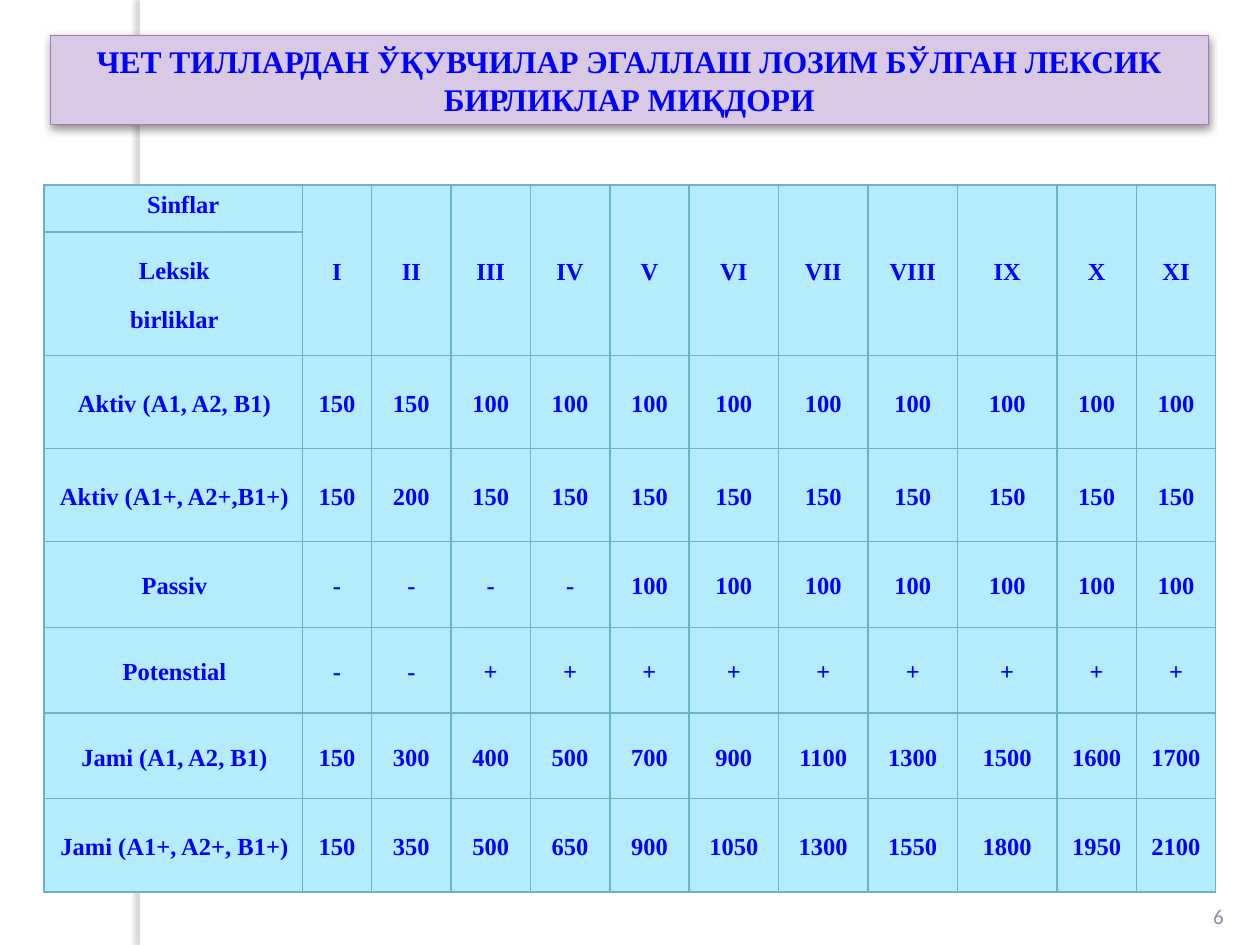
from typing import NamedTuple

from lxml.etree import SubElement as Sub
from pptx import Presentation
from pptx.dml.color import RGBColor as RGB
from pptx.enum.shapes import MSO_SHAPE as Kind
from pptx.enum.text import MSO_ANCHOR as Anchor, MSO_AUTO_SIZE as Fit, PP_ALIGN as Align
from pptx.oxml.ns import qn
from pptx.util import Inches, Pt

WHITE = RGB(0xFF, 0xFF, 0xFF)
BLACK = RGB(0, 0, 0)
BLUE = RGB(0, 0, 0xFF)
SKY = RGB(0xB4, 0xEC, 0xFE)
TEAL = RGB(0x6B, 0xB1, 0xC9)
LILAC = RGB(0xDA, 0xC9, 0xE4)
PURPLE = RGB(0xA3, 0x79, 0xBB)
MAUVE = RGB(0x94, 0x8A, 0xA0)
GREY = RGB(0x64, 0x60, 0x68)
SERIF = "Times New Roman"


class Box(NamedTuple):
    left: float
    top: float
    width: float
    height: float


class Shade(NamedTuple):
    color: RGB
    alpha: int
    blur: int
    dist: int
    angle: int


class Row(NamedTuple):
    label: str
    height: float
    values: list[str]


TITLE = "ЧЕТ ТИЛЛАРДАН ЎҚУВЧИЛАР ЭГАЛЛАШ ЛОЗИМ БЎЛГАН ЛЕКСИК БИРЛИКЛАР МИҚДОРИ"
COLS = [2.05, 0.55] + [0.63] * 4 + [0.71] * 3 + [0.79] + [0.63] * 2
ROWS = [
    Row("Sinflar", 0.37, "I II III IV V VI VII VIII IX X XI".split()),
    Row("Leksik\nbirliklar", 0.98, []),
    Row("Aktiv (A1, A2, B1)", 0.74, ["150"] * 2 + ["100"] * 9),
    Row("Aktiv (A1+, A2+,B1+)", 0.74, ["150", "200"] + ["150"] * 9),
    Row("Passiv", 0.68, ["-"] * 4 + ["100"] * 7),
    Row("Potenstial", 0.68, ["-"] * 2 + ["+"] * 9),
    Row("Jami (A1, A2, B1)", 0.68,
        "150 300 400 500 700 900 1100 1300 1500 1600 1700".split()),
    Row("Jami (A1+, A2+, B1+)", 0.74,
        "150 350 500 650 900 1050 1300 1550 1800 1950 2100".split()),
]


def place(box: Box) -> list:
    return [Inches(n) for n in box]


def style(para, size: float, name: str, color: RGB, bold: bool) -> None:
    para.alignment = Align.CENTER
    font = para.font
    font.size, font.name, font.bold = Pt(size), name, bold
    font.color.rgb = color


def add_rect(slide, box: Box, fill: RGB, shade: Shade):
    rect = slide.shapes.add_shape(Kind.RECTANGLE, *place(box))
    rect.fill.solid()
    rect.fill.fore_color.rgb = fill
    rect.line.fill.background()
    rect.shadow.inherit = False
    glow = Sub(rect._element.spPr.find(qn("a:effectLst")), qn("a:outerShdw"),
               blurRad=str(Pt(shade.blur)), dist=str(Pt(shade.dist)),
               dir=str(shade.angle * 60000), algn="ctr", rotWithShape="0")
    tint = Sub(glow, qn("a:srgbClr"), val=str(shade.color))
    Sub(tint, qn("a:alpha"), val=str(shade.alpha * 1000))
    return rect


def add_title(slide) -> None:
    rect = add_rect(slide, Box(0.4, 0.28, 9.19, 0.71), LILAC, Shade(BLACK, 43, 5, 2, 90))
    rect.line.color.rgb = PURPLE
    rect.line.width = Pt(0.75)
    frame = rect.text_frame
    frame.word_wrap = True
    frame.auto_size = Fit.SHAPE_TO_FIT_TEXT
    frame.vertical_anchor = Anchor.MIDDLE
    frame.text = TITLE
    style(frame.paragraphs[0], 18, SERIF, BLUE, True)


def add_number(slide) -> None:
    frame = slide.shapes.add_textbox(*place(Box(9.42, 6.9, 0.5, 0.52))).text_frame
    frame.word_wrap = True
    frame.vertical_anchor = Anchor.BOTTOM
    frame.text = "6"
    style(frame.paragraphs[0], 12, "Calibri", MAUVE, False)


def paint(cell) -> None:
    cell.margin_left = cell.margin_right = Inches(0.07)
    cell.margin_top = cell.margin_bottom = 0
    cell.vertical_anchor = Anchor.MIDDLE
    props = cell._tc.get_or_add_tcPr()
    for side in ("lnL", "lnR", "lnT", "lnB"):
        edge = Sub(props, qn(f"a:{side}"), w=str(Pt(1)))
        Sub(Sub(edge, qn("a:solidFill")), qn("a:srgbClr"), val=str(TEAL))
    cell.fill.solid()
    cell.fill.fore_color.rgb = SKY


def write(cell, text: str, indent: float, line, after: float) -> None:
    cell.text = text
    for para in cell.text_frame.paragraphs:
        para._p.get_or_add_pPr().set("marL", str(Inches(indent)))
        para.line_spacing = line
        para.space_after = Pt(after)
        style(para, 14, SERIF, BLUE, True)


def add_grid(slide) -> None:
    box = Box(0.35, 1.47, sum(COLS), sum(row.height for row in ROWS))
    grid = slide.shapes.add_table(len(ROWS), len(COLS), *place(box)).table
    grid.first_row = grid.horz_banding = False
    for col, width in zip(grid.columns, COLS):
        col.width = Inches(width)
    for cell in grid.iter_cells():
        paint(cell)
    for r, row in enumerate(ROWS):
        grid.rows[r].height = Inches(row.height)
        if r == 0:
            write(grid.cell(r, 0), row.label, 0.16, Pt(12), 0)
        else:
            write(grid.cell(r, 0), row.label, 0.02, 1.15, 10)
        for c, value in enumerate(row.values, 1):
            write(grid.cell(r, c), value, 0, 1.15, 10)
    for c in range(1, len(COLS)):
        grid.cell(0, c).merge(grid.cell(1, c))


def main() -> None:
    deck = Presentation()
    deck.slide_width, deck.slide_height = Inches(10), Inches(7.5)
    slide = deck.slides.add_slide(deck.slide_layouts[6])
    add_rect(slide, Box(1.11, 0, 0.08, 7.5), WHITE, Shade(GREY, 25, 3, 3, 180))
    add_number(slide)
    add_grid(slide)
    add_title(slide)
    deck.save("out.pptx")


if __name__ == "__main__":
    main()
